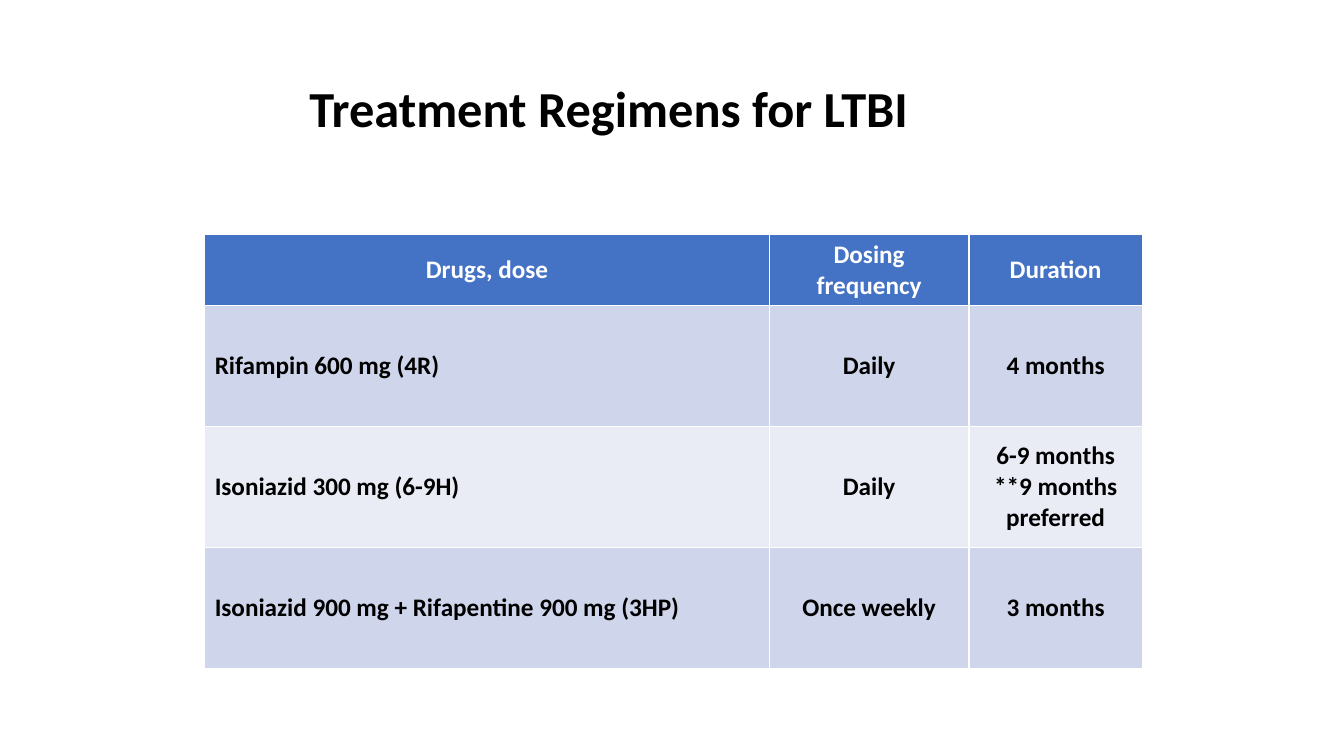
from pptx import Presentation
from pptx.dml.color import RGBColor
from pptx.enum import text
from pptx.util import Inches, Pt

TITLE = "Treatment Regimens for LTBI"
REGIMENS = [
    ("Drugs, dose", "Dosing frequency", "Duration"),
    ("Rifampin 600 mg (4R)", "Daily", "4 months"),
    ("Isoniazid 300 mg (6-9H)", "Daily", "6-9 months\n**9 months preferred"),
    ("Isoniazid 900 mg + Rifapentine 900 mg (3HP)", "Once weekly", "3 months"),
]
COL_WIDTHS = (5.6, 1.98, 1.72)
HEADER_HEIGHT, ROW_HEIGHT = 0.7, 1.2
THEME = {
    "font": "Calibri", "title_size": 36, "table_size": 18,
    "text": "000000", "header_text": "FFFFFF",
    "header_fill": "4472C4", "bands": ("E9EBF5", "CFD5EA"),
}


def write(tf, content, size, color, align):
    tf.text = content
    tf.word_wrap = True
    for p in tf.paragraphs:
        p.alignment = align
        for r in p.runs:
            r.font.name = THEME["font"]
            r.font.size = Pt(size)
            r.font.bold = True
            r.font.color.rgb = RGBColor.from_string(color)


def add_title(slide):
    box = slide.shapes.add_textbox(Inches(2.97), Inches(0.48), Inches(6.51), Inches(1.25))
    tf = box.text_frame
    write(tf, TITLE, THEME["title_size"], THEME["text"], text.PP_ALIGN.LEFT)
    tf.vertical_anchor = text.MSO_ANCHOR.MIDDLE
    tf.paragraphs[0].line_spacing = 0.9


def add_regimens(slide):
    heights = [HEADER_HEIGHT] + [ROW_HEIGHT] * (len(REGIMENS) - 1)
    table = slide.shapes.add_table(
        len(REGIMENS), len(COL_WIDTHS), Inches(2.03), Inches(2.33),
        Inches(sum(COL_WIDTHS)), Inches(sum(heights))).table
    for column, width in zip(table.columns, COL_WIDTHS):
        column.width = Inches(width)
    for i, (row, height, values) in enumerate(zip(table.rows, heights, REGIMENS)):
        row.height = Inches(height)
        header = i == 0
        fill = THEME["header_fill"] if header else THEME["bands"][i % 2]
        color = THEME["header_text"] if header else THEME["text"]
        for j, (cell, value) in enumerate(zip(row.cells, values)):
            left = j == 0 and not header
            align = text.PP_ALIGN.LEFT if left else text.PP_ALIGN.CENTER
            write(cell.text_frame, value, THEME["table_size"], color, align)
            cell.vertical_anchor = text.MSO_ANCHOR.MIDDLE
            cell.fill.solid()
            cell.fill.fore_color.rgb = RGBColor.from_string(fill)


def main():
    prs = Presentation()
    prs.slide_width, prs.slide_height = Inches(13.33), Inches(7.5)
    slide = prs.slides.add_slide(prs.slide_layouts[6])
    add_title(slide)
    add_regimens(slide)
    prs.save("out.pptx")


if __name__ == "__main__":
    main()
